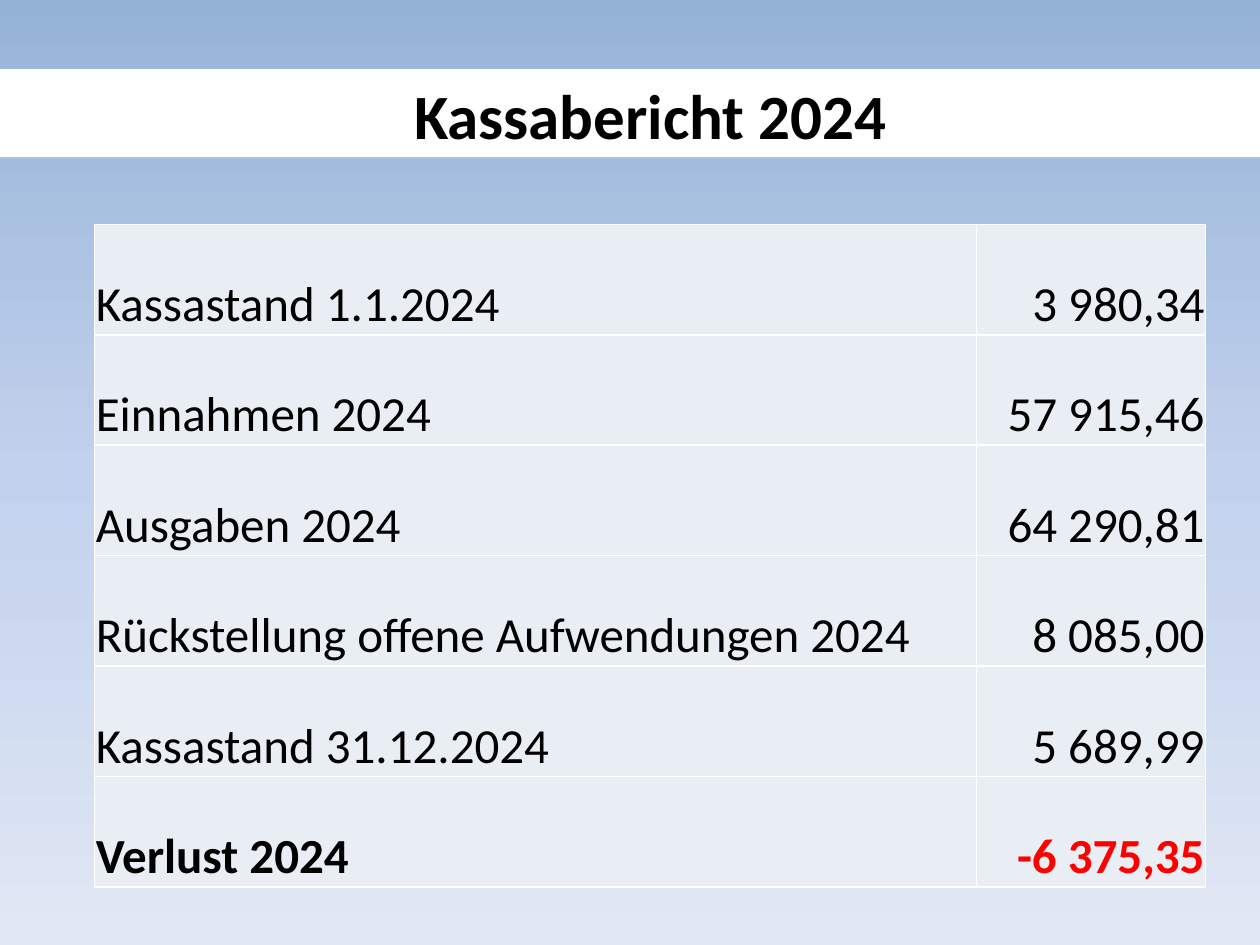
from copy import deepcopy
from dataclasses import dataclass

from lxml.etree import SubElement
from pptx import Presentation
from pptx.dml.color import RGBColor
from pptx.enum.shapes import MSO_SHAPE
from pptx.enum.text import MSO_ANCHOR, PP_ALIGN
from pptx.oxml.ns import qn
from pptx.util import Pt


@dataclass(frozen=True)
class Theme:
    font: str = "Calibri"
    title_size: int = 36
    cell_size: int = 28
    text: str = "000000"
    loss: str = "FF0000"
    white: str = "FFFFFF"
    cell: str = "E9EDF4"
    gradient: tuple = ("95B3D7", "C2D1ED", "E1E8F5")


THEME = Theme()
ROWS = [
    ("Kassastand 1.1.2024", "3 980,34"),
    ("Einnahmen 2024", "57 915,46"),
    ("Ausgaben 2024", "64 290,81"),
    ("Rückstellung offene Aufwendungen 2024", "8 085,00"),
    ("Kassastand 31.12.2024", "5 689,99"),
    ("Verlust 2024", "-6 375,35"),
]


def set_all(obj, values):
    for name, value in values.items():
        setattr(obj, name, value)


def write(tf, text, size, color, bold, align):
    p = tf.paragraphs[0]
    p.alignment = align
    r = p.add_run()
    r.text = text
    set_all(r.font, {"name": THEME.font, "size": Pt(size), "bold": bold})
    r.font.color.rgb = RGBColor.from_string(color)


def paint_background(s):
    fill = s.background.fill
    fill.gradient()
    fill.gradient_angle = 270
    first = s.element.find(".//" + qn("a:gs"))
    first.addnext(deepcopy(first))
    for i, (stop, color) in enumerate(zip(fill.gradient_stops, THEME.gradient)):
        stop.position = i / 2
        stop.color.rgb = RGBColor.from_string(color)


def add_title_band(s, text, x, y, w, h):
    band = s.shapes.add_shape(MSO_SHAPE.RECTANGLE, Pt(x), Pt(y), Pt(w), Pt(h))
    band.shadow.inherit = False
    band.fill.solid()
    band.fill.fore_color.rgb = RGBColor.from_string(THEME.white)
    band.line.fill.background()
    box = s.shapes.add_textbox(Pt(x + 144.7), Pt(y + 1.5), Pt(454), Pt(h - 2))
    tf = box.text_frame
    set_all(tf, {"word_wrap": True, "vertical_anchor": MSO_ANCHOR.MIDDLE})
    write(tf, text, THEME.title_size, THEME.text, True, PP_ALIGN.CENTER)


def add_borders(cell):
    tc_pr = cell._tc.get_or_add_tcPr()
    for side in "LRTB":
        ln = SubElement(tc_pr, qn(f"a:ln{side}"), w=str(Pt(1)))
        solid = SubElement(ln, qn("a:solidFill"))
        SubElement(solid, qn("a:srgbClr"), val=THEME.white)


def add_cash_table(s, rows, x, y, w, h):
    frame = s.shapes.add_table(len(rows), 2, Pt(x), Pt(y), Pt(w), Pt(h))
    table = frame.table
    set_all(table, {"first_row": False, "horz_banding": False})
    amount_w = 131
    for col, width in zip(table.columns, (w - amount_w, amount_w)):
        col.width = Pt(width)
    cell_format = {
        "margin_left": Pt(0.75),
        "margin_right": Pt(0.75),
        "margin_top": Pt(0.75),
        "margin_bottom": Pt(0),
        "vertical_anchor": MSO_ANCHOR.BOTTOM,
    }
    for i, row in enumerate(rows):
        table.rows[i].height = Pt(h / len(rows))
        is_total = i == len(rows) - 1
        for j, text in enumerate(row):
            cell = table.cell(i, j)
            set_all(cell, cell_format)
            add_borders(cell)
            cell.fill.solid()
            cell.fill.fore_color.rgb = RGBColor.from_string(THEME.cell)
            color = THEME.loss if is_total and j else THEME.text
            align = PP_ALIGN.RIGHT if j else PP_ALIGN.LEFT
            write(cell.text_frame, text, THEME.cell_size, color, is_total, align)


def main():
    prs = Presentation()
    set_all(prs, {"slide_width": Pt(720), "slide_height": Pt(540)})
    s = prs.slides.add_slide(prs.slide_layouts[6])
    paint_background(s)
    add_title_band(s, "Kassabericht 2024", 0, 39.5, 720, 50.4)
    add_cash_table(s, ROWS, 54, 128.2, 635, 378.6)
    prs.save("out.pptx")


if __name__ == "__main__":
    main()
